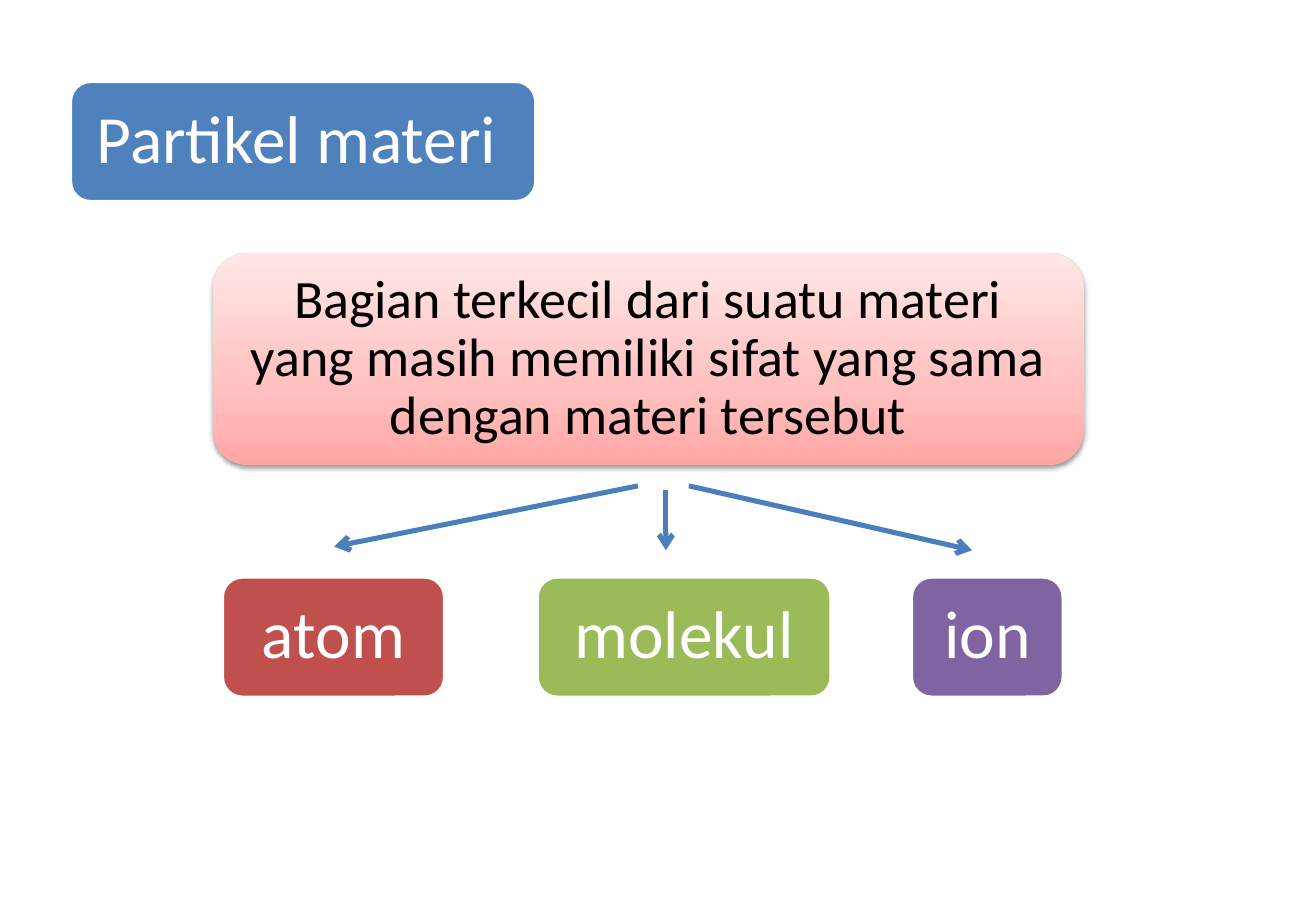
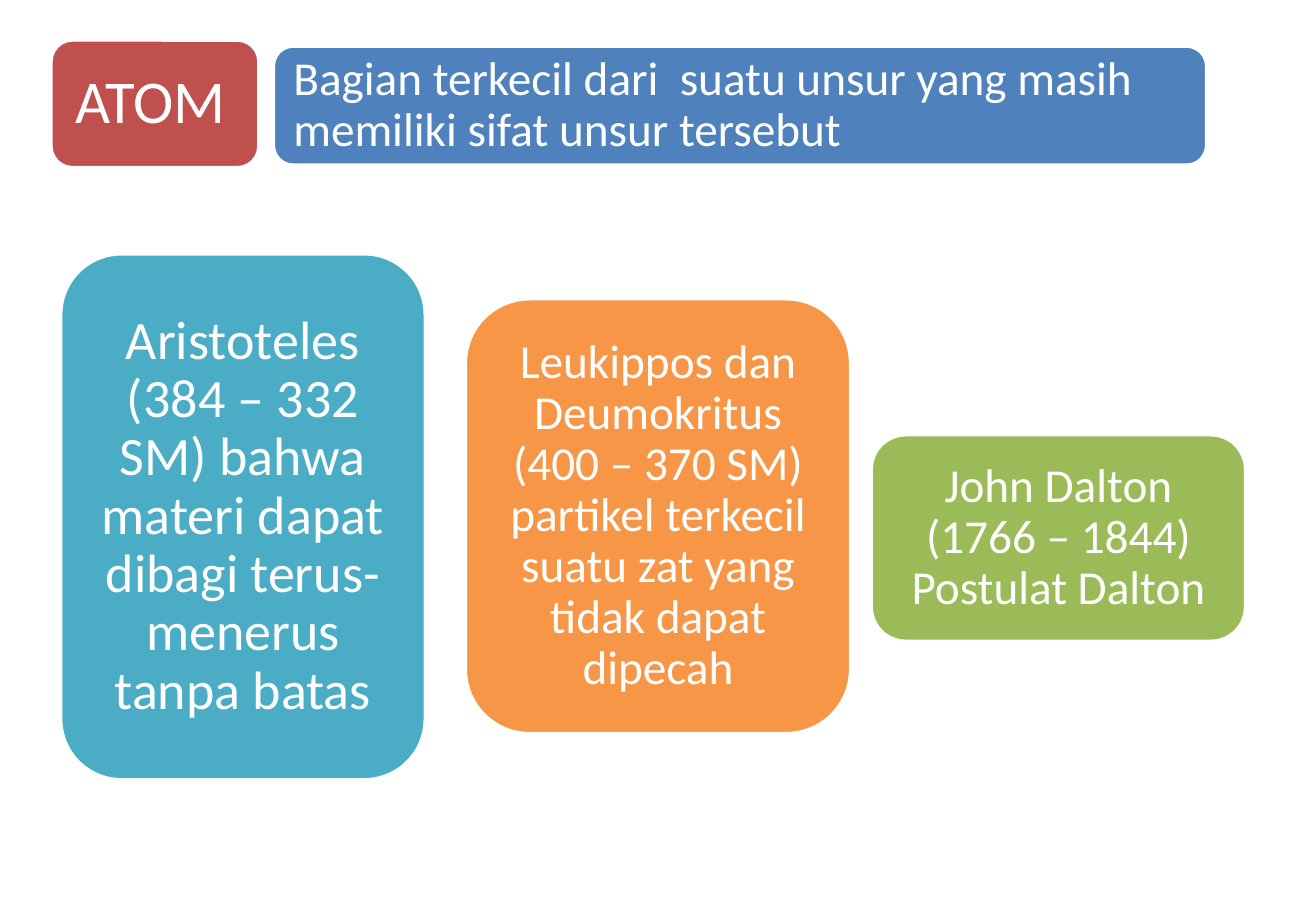
import lxml.etree
import pptx
import pptx.dml.color
import pptx.enum.shapes
import pptx.enum.text
import pptx.oxml.ns
import pptx.util

Inches = pptx.util.Inches
Pt = pptx.util.Pt
qn = pptx.oxml.ns.qn
ALIGN = pptx.enum.text.PP_ALIGN

# Shared look
FONT = "Calibri"
WHITE, BLACK = "FFFFFF", "000000"
BLUE, RED, GREEN = "4F81BD", "C0504D", "9BBB59"
PURPLE, TEAL, ORANGE = "8064A2", "4BACC6", "F79646"
ARROW_BLUE = "4B7EBC"
PINK_STOPS = [(0, "FFA6A5"), (35, "FFC0BF"), (100, "FFE7E7")]
TITLE_ONLY = 5
CORNER_INSET = 0.05


def rgb(colour):
    return pptx.dml.color.RGBColor.from_string(colour)


def add_child(parent, tag, **attributes):
    return lxml.etree.SubElement(parent, qn(tag), attributes)


def write(frame, text, size, colour, align, margin):
    """Fill a text frame with one formatted paragraph."""
    frame.word_wrap = True
    frame.auto_size = pptx.enum.text.MSO_AUTO_SIZE.NONE
    frame.vertical_anchor = pptx.enum.text.MSO_ANCHOR.MIDDLE
    frame.margin_left = frame.margin_right = Inches(margin)
    frame.margin_top = frame.margin_bottom = Inches(margin)
    paragraph = frame.paragraphs[0]
    paragraph.alignment = align
    paragraph.line_spacing = 0.9
    run = paragraph.add_run()
    run.text = text
    run.font.size = Pt(size)
    run.font.name = FONT
    run.font.color.rgb = rgb(colour)


def add_card(slide, bounds, fill, text="", size=28, colour=WHITE,
             align=ALIGN.CENTER):
    """Rounded card with a white outline and optional text."""
    card = slide.shapes.add_shape(
        pptx.enum.shapes.MSO_SHAPE.ROUNDED_RECTANGLE,
        *[Inches(length) for length in bounds])
    card.shadow.inherit = False
    card.fill.solid()
    card.fill.fore_color.rgb = rgb(fill)
    card.line.color.rgb = rgb(WHITE)
    card.line.width = Pt(2)
    if text:
        write(card.text_frame, text, size, colour, align, size / 240)
    return card


def add_title(slide, bounds, fill, text, size):
    """Title placeholder lying on a rounded card."""
    add_card(slide, bounds, fill)
    left, top, width, height = bounds
    title = slide.shapes.title
    title.left, title.top = Inches(left + CORNER_INSET), Inches(top + CORNER_INSET)
    title.width = Inches(width - 2 * CORNER_INSET)
    title.height = Inches(height - 2 * CORNER_INSET)
    write(title.text_frame, text, size, WHITE, ALIGN.LEFT, size / 240)
    slide.shapes._spTree.append(title._element)  # bring in front of its card


def add_gradient_card(slide, bounds, stops, text, size):
    """Borderless card with an upward gradient and a soft shadow."""
    card = add_card(slide, bounds, WHITE, text, size, BLACK)
    card.line.fill.background()
    card.fill.gradient()
    card.fill.gradient_angle = 90
    properties = card._element.spPr
    stop_list = properties.find(".//" + qn("a:gsLst"))
    for default_stop in list(stop_list):
        stop_list.remove(default_stop)
    for position, colour in stops:
        stop = add_child(stop_list, "a:gs", pos=str(position * 1000))
        add_child(stop, "a:srgbClr", val=colour)
    shadow = add_child(properties.find(qn("a:effectLst")), "a:outerShdw",
                       blurRad=str(Pt(3.1)), dist=str(Pt(1.6)),
                       dir="5400000", rotWithShape="0")
    add_child(add_child(shadow, "a:srgbClr", val=BLACK), "a:alpha", val="38000")


def add_arrow(slide, start, end):
    arrow = slide.shapes.add_connector(
        pptx.enum.shapes.MSO_CONNECTOR.STRAIGHT,
        *[Inches(length) for length in start + end])
    arrow.line.color.rgb = rgb(ARROW_BLUE)
    arrow.line.width = Pt(3)
    properties = arrow._element.spPr
    add_child(properties.find(qn("a:ln")), "a:tailEnd", type="arrow")
    add_child(properties, "a:effectLst")


def build_particles(slide):
    add_title(slide, (0.58, 0.67, 3.83, 0.99), BLUE, "Partikel materi", 40)
    add_gradient_card(
        slide, (1.75, 2.08, 7.17, 1.75), PINK_STOPS,
        "Bagian terkecil dari suatu materi yang masih memiliki sifat yang "
        "sama dengan materi tersebut", 32)
    # Kinds of particle
    for left, width, fill, particle in [(1.83, 1.83, RED, "atom"),
                                        (4.42, 2.42, GREEN, "molekul"),
                                        (7.5, 1.25, PURPLE, "ion")]:
        add_card(slide, (left, 4.75, width, 0.99), fill, particle, 40)
    for start, end in [((5.25, 4), (2.75, 4.5)),
                       ((5.67, 4), (8, 4.53)),
                       ((5.48, 4.03), (5.48, 4.53))]:
        add_arrow(slide, start, end)


def build_atom(slide):
    add_title(slide, (0.42, 0.33, 1.71, 1.05), RED, "ATOM", 36)
    add_card(slide, (2.25, 0.38, 7.68, 0.98), BLUE,
             "Bagian terkecil dari  suatu unsur yang masih memiliki sifat "
             "unsur tersebut", align=ALIGN.LEFT)
    # Thinkers and their views
    add_card(slide, (0.5, 2.09, 3, 4.33), TEAL,
             "Aristoteles (384 – 332 SM) bahwa materi dapat dibagi "
             "terus-menerus tanpa batas", 32)
    add_card(slide, (3.83, 2.46, 3.17, 3.58), ORANGE,
             "Leukippos dan Deumokritus (400 – 370 SM) partikel terkecil "
             "suatu zat yang tidak dapat dipecah")
    add_card(slide, (7.17, 3.58, 3.08, 1.7), GREEN,
             "John Dalton (1766 – 1844) Postulat Dalton")


def main():
    deck = pptx.Presentation()
    deck.slide_width, deck.slide_height = Inches(10.83), Inches(7.5)
    for build in (build_particles, build_atom):
        build(deck.slides.add_slide(deck.slide_layouts[TITLE_ONLY]))
    deck.save("out.pptx")


if __name__ == "__main__":
    main()
